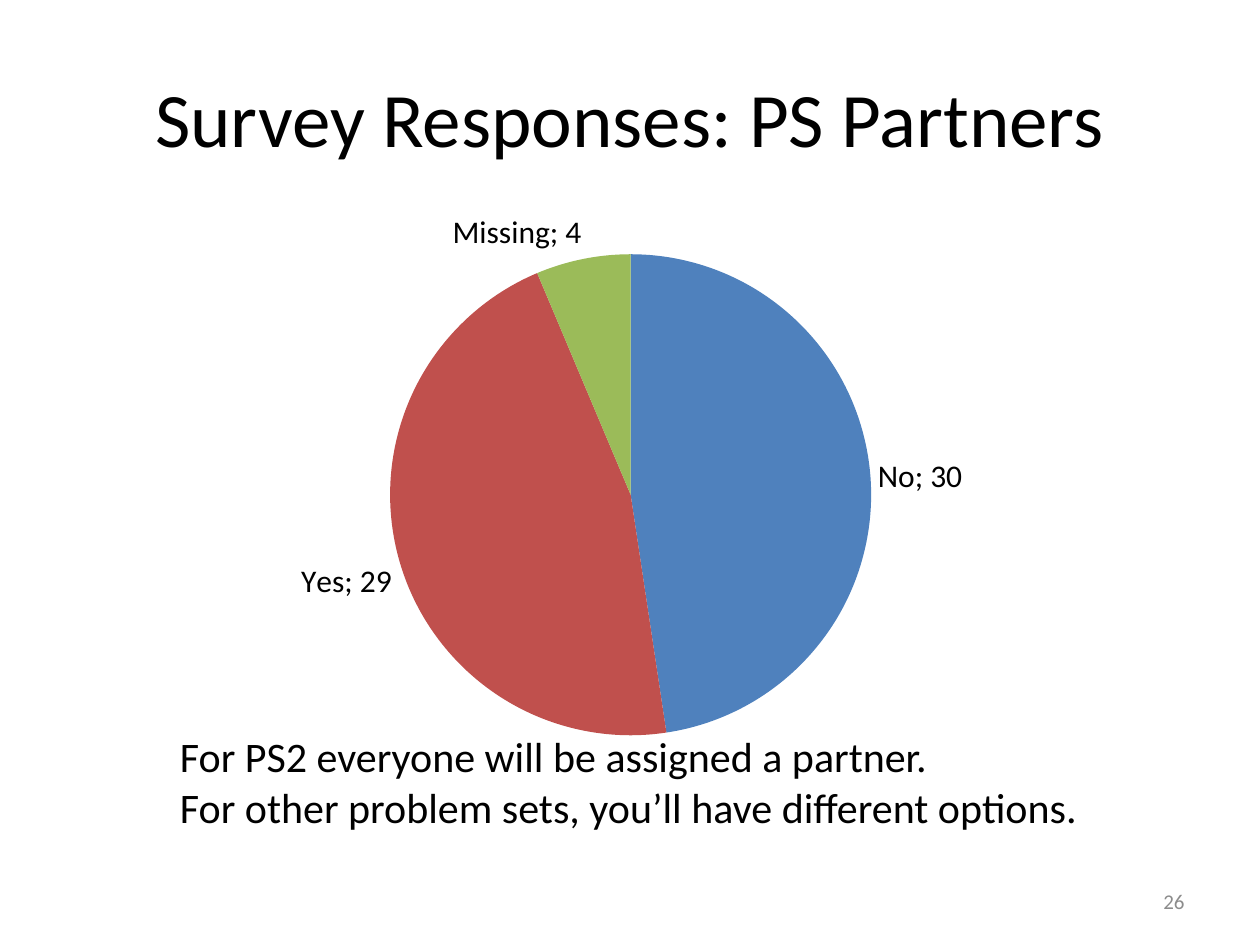
from lxml import etree
from pptx import Presentation
from pptx.chart.data import CategoryChartData
from pptx.dml.color import RGBColor
from pptx.enum.chart import XL_CHART_TYPE as ChartType, XL_LABEL_POSITION as LabelPos
from pptx.enum.text import MSO_ANCHOR as Anchor, PP_ALIGN as Align
from pptx.oxml import parse_xml
from pptx.oxml.ns import nsdecls, qn
from pptx.util import Inches, Pt

FONT = "Calibri"
COLORS = {"text": "000000", "number": "8C8C8C",
          "No": "4F81BD", "Yes": "C0504D", "Missing": "9BBB59"}
RESPONSES = {"No": 30, "Yes": 29, "Missing": 4}


def color(name):
    return RGBColor.from_string(COLORS[name])


def set_font(font, size, shade="text"):
    font.name = FONT
    font.size = Pt(size)
    font.color.rgb = color(shade)


def write(shape, *lines, size, shade="text", align=Align.LEFT,
          anchor=Anchor.TOP, wrap=True):
    frame = shape.text_frame
    frame.word_wrap = wrap
    frame.vertical_anchor = anchor
    frame.text = "\n".join(lines)
    for paragraph in frame.paragraphs:
        paragraph.alignment = align
        for run in paragraph.runs:
            set_font(run.font, size, shade)


def add_note(slide, box, *lines, **text_format):
    note = slide.shapes.add_textbox(*map(Inches, box))
    write(note, *lines, **text_format)


def place_plot(chart, **fractions):
    """Fix the inner plot area as fractions of the chart frame."""
    modes = '<c:layoutTarget val="inner"/><c:xMode val="edge"/><c:yMode val="edge"/>'
    sizes = "".join(f'<c:{key} val="{value}"/>' for key, value in fractions.items())
    plot_area = chart._chartSpace.chart.plotArea
    for old in plot_area.findall(qn("c:layout")):
        plot_area.remove(old)
    plot_area.insert(0, parse_xml(
        f'<c:layout {nsdecls("c")}><c:manualLayout>{modes}{sizes}'
        '</c:manualLayout></c:layout>'))


def add_pie(slide, box, responses):
    data = CategoryChartData()
    data.categories = list(responses)
    data.add_series("Series 1", list(responses.values()))
    chart = slide.shapes.add_chart(ChartType.PIE, *map(Inches, box), data).chart
    chart.has_title = False
    chart.has_legend = False
    set_font(chart.font, 18)
    place_plot(chart, x=0.21, y=0.11, w=0.58, h=0.86)

    # Slice colours
    pie = chart.plots[0]
    pie.vary_by_categories = True
    for index, answer in enumerate(responses):
        fill = pie.series[0].points[index].format.fill
        fill.solid()
        fill.fore_color.rgb = color(answer)

    # Labels such as "No; 30"
    labels = pie.series[0].data_labels
    labels.show_category_name = True
    labels.show_value = True
    labels.show_percentage = False
    labels.show_legend_key = False
    labels.position = LabelPos.OUTSIDE_END
    set_font(labels.font, 18)
    separator = etree.Element(qn("c:separator"))
    separator.text = "; "
    labels._element.find(qn("c:showBubbleSize")).addnext(separator)


def main():
    deck = Presentation()
    deck.slide_width, deck.slide_height = Inches(10), Inches(7.5)
    slide = deck.slides.add_slide(deck.slide_layouts[5])

    # Title
    title = slide.shapes.title
    title.left, title.top, title.width, title.height = map(Inches, (0.5, 0.3, 9, 1.25))
    write(title, "Survey Responses: PS Partners", size=44,
          align=Align.CENTER, anchor=Anchor.MIDDLE)

    # Slide number
    add_note(slide, (7.17, 6.95, 2.33, 0.4), "26", size=12, shade="number",
             align=Align.RIGHT, anchor=Anchor.MIDDLE)

    # Survey results and what follows from them
    add_pie(slide, (1.67, 1.53, 6.67, 4.44), RESPONSES)
    add_note(slide, (1.33, 5.75, 7.4, 0.91),
             "For PS2 everyone will be assigned a partner.",
             "For other problem sets, you’ll have different options.",
             size=24, wrap=False)

    deck.save("out.pptx")


if __name__ == "__main__":
    main()
